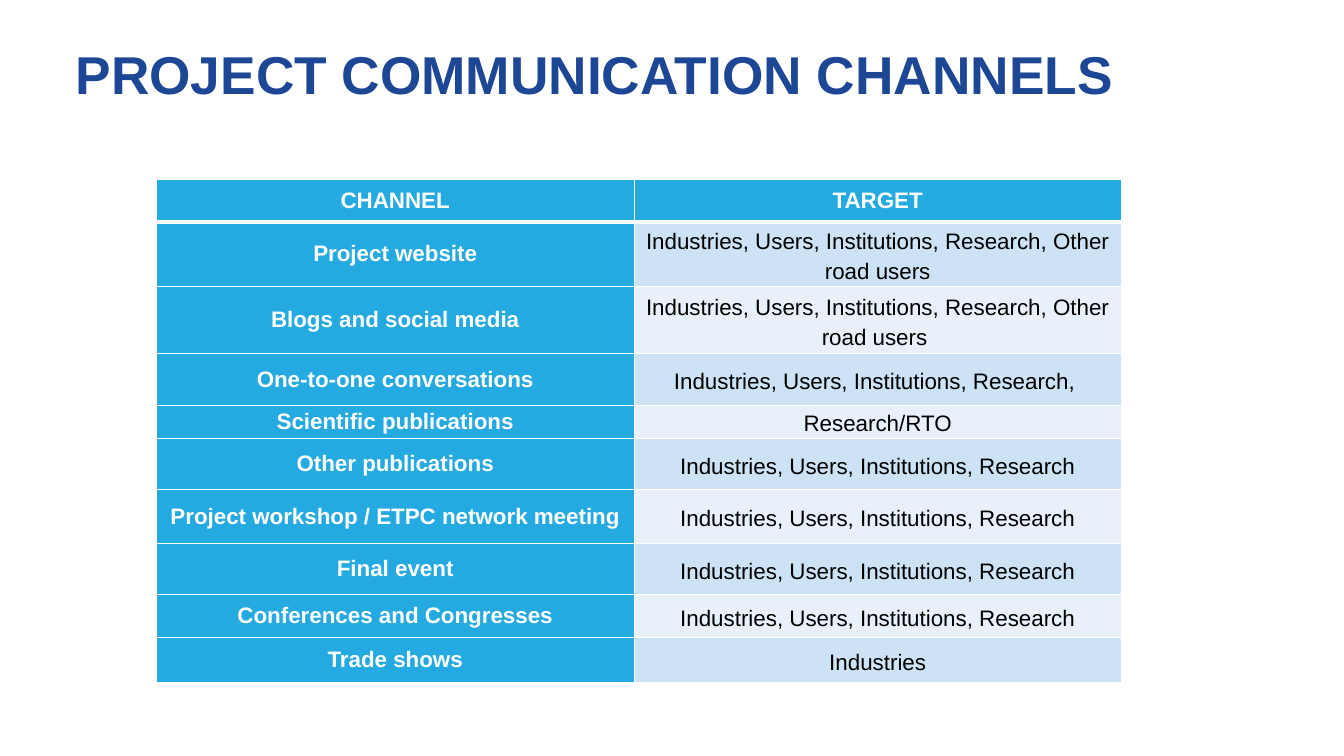
from lxml.etree import SubElement
from pptx import Presentation
from pptx.dml.color import RGBColor
from pptx.enum.text import MSO_ANCHOR, PP_ALIGN
from pptx.oxml.ns import qn
from pptx.util import Inches, Pt

COLORS = {
    "title": "1D4694",
    "head": "24AAE1",
    "odd": "CDE2F4",
    "even": "E8F1F9",
    "white": "FFFFFF",
    "black": "000000",
}

# Channel, target and row height in inches
MAIN = "Industries, Users, Institutions, Research"
ROWS = [
    ("CHANNEL", "TARGET", 0.42),
    ("Project website", MAIN + ", Other road users", 0.64),
    ("Blogs and social media", MAIN + ", Other road users ", 0.67),
    ("One-to-one conversations", MAIN + ", ", 0.51),
    ("Scientific publications", "Research/RTO", 0.33),
    ("Other publications", MAIN, 0.51),
    ("Project workshop / ETPC network meeting", MAIN, 0.53),
    ("Final event", MAIN, 0.51),
    ("Conferences and Congresses", MAIN, 0.43),
    ("Trade shows", "Industries", 0.44),
]
WIDTHS = [4.74, 4.83]


def color(name):
    return RGBColor.from_string(COLORS[name])


def apply(item, values):
    for name, value in values.items():
        setattr(item, name, value)


def style(para, size, shade, bold):
    apply(para.font, {"name": "Arial", "size": Pt(size), "bold": bold})
    para.font.color.rgb = color(shade)


def border(cell, side, width):
    line = SubElement(cell._tc.get_or_add_tcPr(), qn("a:" + side), w=str(Pt(width)))
    fill = SubElement(line, qn("a:solidFill"))
    SubElement(fill, qn("a:srgbClr"), val=COLORS["white"])


def add_title(slide, text):
    title = slide.shapes.title
    apply(title, {
        "left": Inches(0.67), "top": Inches(0.3),
        "width": Inches(12), "height": Inches(1.25),
    })
    frame = title.text_frame
    apply(frame, {
        "text": text, "word_wrap": True, "vertical_anchor": MSO_ANCHOR.TOP,
        "margin_left": Inches(0.08), "margin_top": Inches(0.11),
    })
    para = frame.paragraphs[0]
    para.alignment = PP_ALIGN.LEFT
    para.line_spacing = 1.0
    style(para, 38, "title", True)


def fill_cell(cell, text, row, col):
    strong = row == 0 or col == 0
    apply(cell, {
        "text": text, "vertical_anchor": MSO_ANCHOR.MIDDLE,
        "margin_left": Inches(0.05), "margin_right": Inches(0.05),
        "margin_top": 0, "margin_bottom": 0,
    })

    # A thick rule parts the header from the body
    thick = {(0, "lnB"), (1, "lnT")}
    for side in ("lnL", "lnR", "lnT", "lnB"):
        border(cell, side, 3 if (row, side) in thick else 1)
    cell.fill.solid()
    band = "odd" if row % 2 else "even"
    cell.fill.fore_color.rgb = color("head" if strong else band)

    para = cell.text_frame.paragraphs[0]
    apply(para, {
        "alignment": PP_ALIGN.CENTER,
        "line_spacing": 1.0 if strong else 1.2,
    })
    style(para, 16, "white" if strong else "black", strong)


def add_grid(slide):
    high = sum(row[-1] for row in ROWS)
    table = slide.shapes.add_table(
        len(ROWS), len(WIDTHS), Inches(1.55), Inches(1.78),
        Inches(sum(WIDTHS)), Inches(high)).table
    for col, width in enumerate(WIDTHS):
        table.columns[col].width = Inches(width)
    for row, (*texts, height) in enumerate(ROWS):
        table.rows[row].height = Inches(height)
        for col, text in enumerate(texts):
            fill_cell(table.cell(row, col), text, row, col)


def main():
    deck = Presentation()
    apply(deck, {"slide_width": Inches(13.33), "slide_height": Inches(7.5)})
    slide = deck.slides.add_slide(deck.slide_layouts[5])
    add_title(slide, "PROJECT COMMUNICATION CHANNELS")
    add_grid(slide)
    deck.save("out.pptx")


if __name__ == "__main__":
    main()
